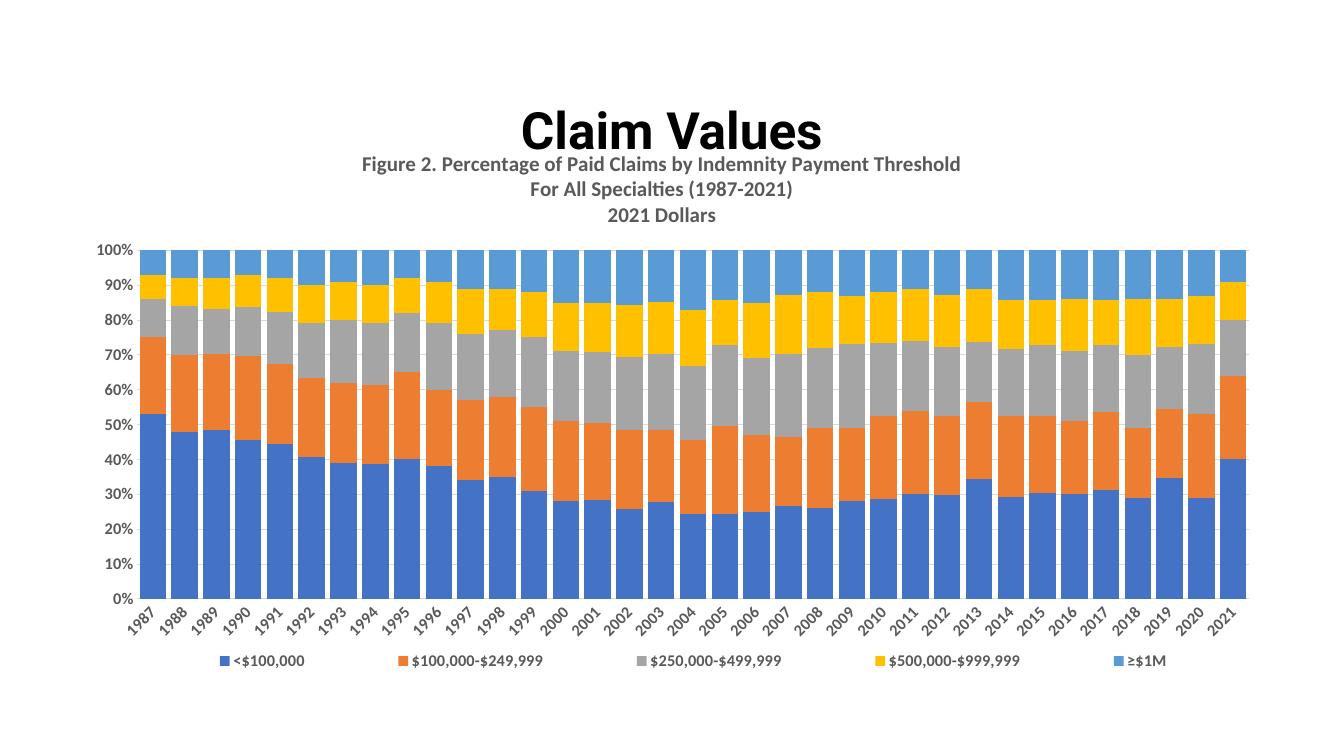
from pptx import Presentation
from pptx.chart.data import CategoryChartData
from pptx.dml.color import RGBColor
from pptx.enum import chart as ch, text
from pptx.oxml import parse_xml
from pptx.oxml.ns import nsdecls
from pptx.util import Inches, Pt

# Content
HEADING = "Claim Values"
FIGURE_TITLE = [
    "Figure 2. Percentage of Paid Claims by Indemnity Payment Threshold",
    "For All Specialties (1987-2021)",
    "2021 Dollars",
]
YEARS = [str(year) for year in range(1987, 2022)]
THRESHOLDS = [
    ("<$100,000", "4472C4",
     [53, 48, 49, 45, 45, 41, 39, 39, 40, 38, 34, 35, 31, 28, 28, 26, 28, 24,
      24, 25, 27, 26, 28, 29, 30, 30, 34, 29, 30, 30, 31, 29, 35, 29, 40]),
    ("$100,000-$249,999", "ED7D31",
     [22, 22, 22, 24, 23, 23, 23, 23, 25, 22, 23, 23, 24, 23, 22, 23, 21, 21,
      25, 22, 20, 23, 21, 24, 24, 23, 22, 23, 22, 21, 22, 20, 20, 24, 24]),
    ("$250,000-$499,999", "A5A5A5",
     [11, 14, 13, 14, 15, 16, 18, 18, 17, 19, 19, 19, 20, 20, 20, 21, 22, 21,
      23, 22, 24, 23, 24, 21, 20, 20, 17, 19, 20, 20, 19, 21, 18, 20, 16]),
    ("$500,000-$999,999", "FFC000",
     [7, 8, 9, 9, 10, 11, 11, 11, 10, 12, 13, 12, 13, 14, 14, 15, 15, 16,
      13, 16, 17, 16, 14, 15, 15, 15, 15, 14, 13, 15, 13, 16, 14, 14, 11]),
    ("≥$1M", "5B9BD5",
     [7, 8, 8, 7, 8, 10, 9, 10, 8, 9, 11, 11, 12, 15, 15, 16, 15, 17,
      14, 15, 13, 12, 13, 12, 11, 13, 11, 14, 14, 14, 14, 14, 14, 13, 9]),
]

THEME = {
    "heading": dict(font="Roboto", size=44, color="000000"),
    "figure": dict(font="Calibri", size=18, color="595959"),
    "label": dict(font="Calibri", size=14, color="595959"),
    "rule": "D9D9D9",
}
HEADING_BOX = [Inches(v) for v in (1.1, 0.48, 13.8, 1.74)]
CHART_BOX = (0.84, 1.51, 14.32, 6.64)
# Places on the slide, in inches
FIGURE_TITLE_AT = (4.28, 1.75)
PLOT_AT = (1.63, 2.98, 13.24, 4.15)
LEGEND_AT = (1.57, 7.69, 13.37, 0.36)


def style(font_obj, font, size, color):
    font_obj.name, font_obj.size, font_obj.bold = font, Pt(size), True
    font_obj.color.rgb = RGBColor.from_string(color)


def write(frame, lines, align=text.PP_ALIGN.CENTER, spacing=None, **look):
    for i, line in enumerate(lines):
        paragraph = frame.paragraphs[0] if i == 0 else frame.add_paragraph()
        paragraph.alignment = align
        paragraph.line_spacing = spacing
        run = paragraph.add_run()
        run.text = line
        style(run.font, **look)


def rule(line):
    line.color.rgb = RGBColor.from_string(THEME["rule"])
    line.width = Pt(0.75)


def layout_xml(place, inner=False):
    """Manual layout: slide inches become fractions of the chart."""
    left, top, width, height = CHART_BOX
    offsets = (left, top, 0, 0)
    sizes = (width, height, width, height)
    parts = ['<c:layoutTarget val="inner"/>'] if inner else []
    parts += [f'<c:{axis}Mode val="edge"/>' for axis in "xy"]
    parts += [f'<c:{key} val="{(v - o) / s:.4f}"/>'
              for key, v, o, s in zip("xywh", place, offsets, sizes)]
    return parse_xml(f'<c:layout {nsdecls("c")}><c:manualLayout>'
                     f'{"".join(parts)}</c:manualLayout></c:layout>')


def place(element, before, layout):
    for old in element.findall(layout.tag):
        element.remove(old)
    following = [child for child in element
                 if child.tag.split("}")[1] in before]
    following[0].addprevious(layout)


def main():
    prs = Presentation()
    prs.slide_width, prs.slide_height = Inches(16), Inches(9)
    slide = prs.slides.add_slide(prs.slide_layouts[5])

    # Heading
    heading = slide.shapes.title
    heading.left, heading.top, heading.width, heading.height = HEADING_BOX
    frame = heading.text_frame
    frame.auto_size = text.MSO_AUTO_SIZE.NONE
    frame.vertical_anchor = text.MSO_ANCHOR.MIDDLE
    write(frame, [HEADING], spacing=1.5, **THEME["heading"])

    # Stacked shares by year
    data = CategoryChartData(number_format="0")
    data.categories = YEARS
    for name, _, shares in THRESHOLDS:
        data.add_series(name, shares)
    claims = slide.shapes.add_chart(
        ch.XL_CHART_TYPE.COLUMN_STACKED_100,
        *[Inches(v) for v in CHART_BOX], data).chart
    style(claims.font, **THEME["label"])
    plot = claims.plots[0]
    plot.gap_width, plot.overlap, plot.vary_by_categories = 20, 100, False
    for series, (_, color, _) in zip(plot.series, THRESHOLDS):
        series.format.fill.solid()
        series.format.fill.fore_color.rgb = RGBColor.from_string(color)

    # Figure title
    claims.has_title = True
    title = claims.chart_title
    title.include_in_layout = False
    write(title.text_frame, FIGURE_TITLE, **THEME["figure"])

    # Axes
    years, percent = claims.category_axis, claims.value_axis
    for axis in (years, percent):
        axis.major_tick_mark = axis.minor_tick_mark = ch.XL_TICK_MARK.NONE
        style(axis.tick_labels.font, **THEME["label"])
    rule(years.format.line)
    years._element.txPr.bodyPr.set("rot", "-2700000")
    percent.format.line.fill.background()
    percent.has_major_gridlines = True
    rule(percent.major_gridlines.format.line)
    percent.minimum_scale, percent.maximum_scale = 0, 1
    percent.major_unit = 0.1
    percent.tick_labels.number_format = "0%"
    percent.tick_labels.number_format_is_linked = False

    # Legend
    claims.has_legend = True
    legend = claims.legend
    legend.position = ch.XL_LEGEND_POSITION.BOTTOM
    legend.include_in_layout = False
    style(legend.font, **THEME["label"])

    # Fixed places inside the chart
    place(title._element, ("overlay",), layout_xml(FIGURE_TITLE_AT))
    place(legend._element, ("overlay",), layout_xml(LEGEND_AT))
    place(claims._chartSpace.chart.plotArea, ("barChart",),
          layout_xml(PLOT_AT, inner=True))

    prs.save("out.pptx")


if __name__ == "__main__":
    main()
